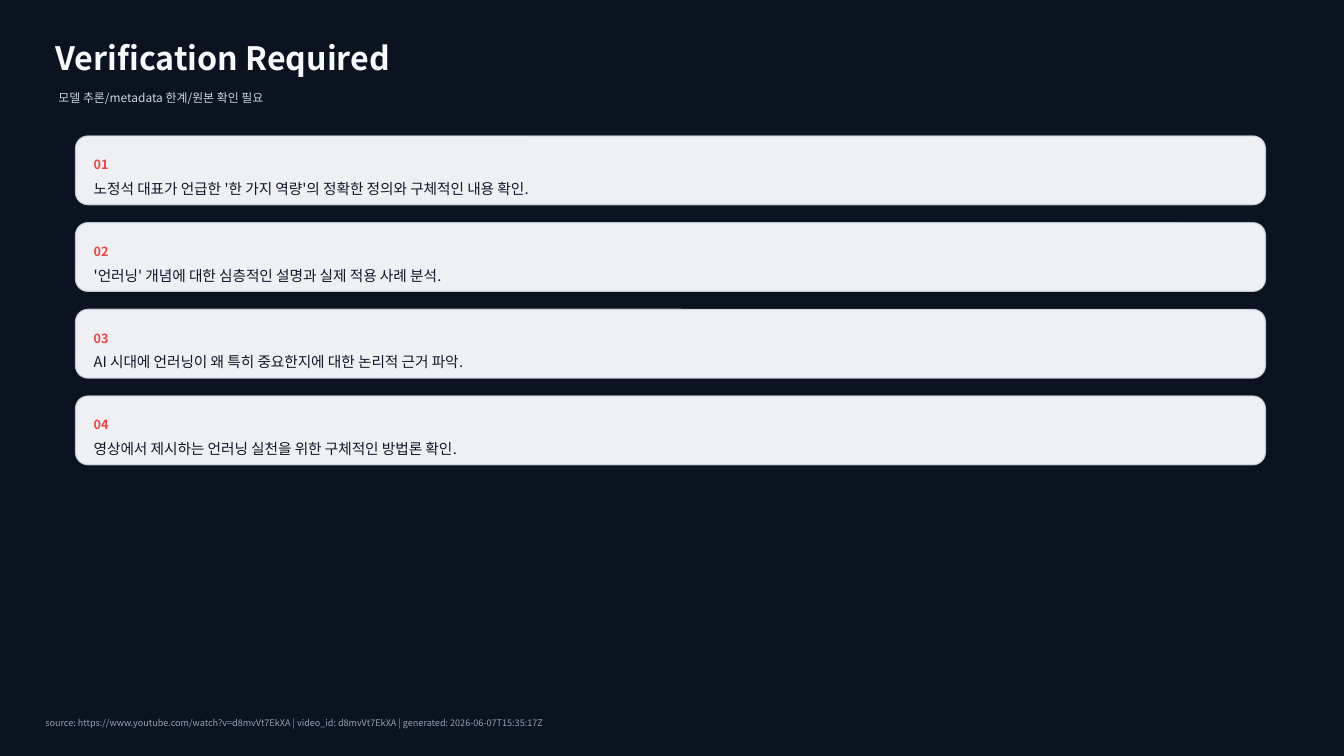
import pptx
import pptx.dml.color
import pptx.enum.shapes
import pptx.enum.text
import pptx.oxml.ns
import pptx.util
from lxml import etree

TITLE = "Verification Required"
SUBTITLE = "모델 추론/metadata 한계/원본 확인 필요"
CHECKS = [
    "노정석 대표가 언급한 '한 가지 역량'의 정확한 정의와 구체적인 내용 확인.",
    "'언러닝' 개념에 대한 심층적인 설명과 실제 적용 사례 분석.",
    "AI 시대에 언러닝이 왜 특히 중요한지에 대한 논리적 근거 파악.",
    "영상에서 제시하는 언러닝 실천을 위한 구체적인 방법론 확인.",
]
SOURCE = (
    "source: https://www.youtube.com/watch?v=d8mvVt7EkXA"
    " | video_id: d8mvVt7EkXA | generated: 2026-06-07T15:35:17Z"
)

FONT = "Noto Sans CJK KR"
WIDTH, HEIGHT = 13.33, 7.5
CARD_LEFT, CARD_TOP = 0.75, 1.35
CARD_WIDTH, CARD_HEIGHT = 11.8, 0.68
CARD_PITCH = CARD_HEIGHT + 0.18
PADDING = 0.18


def color(value):
    return pptx.dml.color.RGBColor.from_string(value)


def inches(*lengths):
    return [pptx.util.Inches(length) for length in lengths]


def set_opacity(fill_element, percent):
    color_element = fill_element.find(".//" + pptx.oxml.ns.qn("a:srgbClr"))
    alpha = etree.SubElement(color_element, pptx.oxml.ns.qn("a:alpha"))
    alpha.set("val", str(percent * 1000))


def add_text(slide, text, box, size, ink, bold=False):
    frame = slide.shapes.add_textbox(*inches(*box)).text_frame
    frame.word_wrap = True
    frame.vertical_anchor = pptx.enum.text.MSO_ANCHOR.MIDDLE
    frame.margin_left = frame.margin_right = 0
    frame.margin_top = frame.margin_bottom = 0
    run = frame.paragraphs[0].add_run()
    run.text = text
    run.font.name = FONT
    run.font.size = pptx.util.Pt(size)
    run.font.bold = bold
    run.font.color.rgb = color(ink)
    east_asian = etree.SubElement(run.font._element, pptx.oxml.ns.qn("a:ea"))
    east_asian.set("typeface", FONT)


def add_card(slide, index, text):
    top = CARD_TOP + index * CARD_PITCH
    card = slide.shapes.add_shape(
        pptx.enum.shapes.MSO_SHAPE.ROUNDED_RECTANGLE,
        *inches(CARD_LEFT, top, CARD_WIDTH, CARD_HEIGHT),
    )
    card.shadow.inherit = False
    card.adjustments[0] = 0.18
    card.fill.solid()
    card.fill.fore_color.rgb = color("F8FAFC")
    card.line.color.rgb = color("D7E0EA")
    card.line.width = pptx.util.Pt(1)
    properties = card._element.spPr
    set_opacity(properties.find(pptx.oxml.ns.qn("a:solidFill")), 96)
    set_opacity(properties.find(pptx.oxml.ns.qn("a:ln")), 80)

    left, width = CARD_LEFT + PADDING, CARD_WIDTH - 2 * PADDING
    add_text(slide, f"{index + 1:02}", (left, top + 0.16, width, 0.25),
             size=9, ink="EF4444", bold=True)
    add_text(slide, text, (left, top + 0.5, width, 0.04),
             size=10.5, ink="0F172A")


def main():
    """Build the verification checklist slide."""
    presentation = pptx.Presentation()
    presentation.slide_width, presentation.slide_height = inches(WIDTH, HEIGHT)
    slide = presentation.slides.add_slide(presentation.slide_layouts[6])
    slide.background.fill.solid()
    slide.background.fill.fore_color.rgb = color("0B1220")

    add_text(slide, TITLE, (0.55, 0.35, 12, 0.45),
             size=23, ink="F8FAFC", bold=True)
    add_text(slide, SUBTITLE, (0.58, 0.83, 11.5, 0.28),
             size=8.5, ink="CBD5E1")
    for index, text in enumerate(CHECKS):
        add_card(slide, index, text)
    add_text(slide, SOURCE, (0.45, 7.05, 12.4, 0.25),
             size=6.5, ink="94A3B8")
    presentation.save("out.pptx")


if __name__ == "__main__":
    main()
